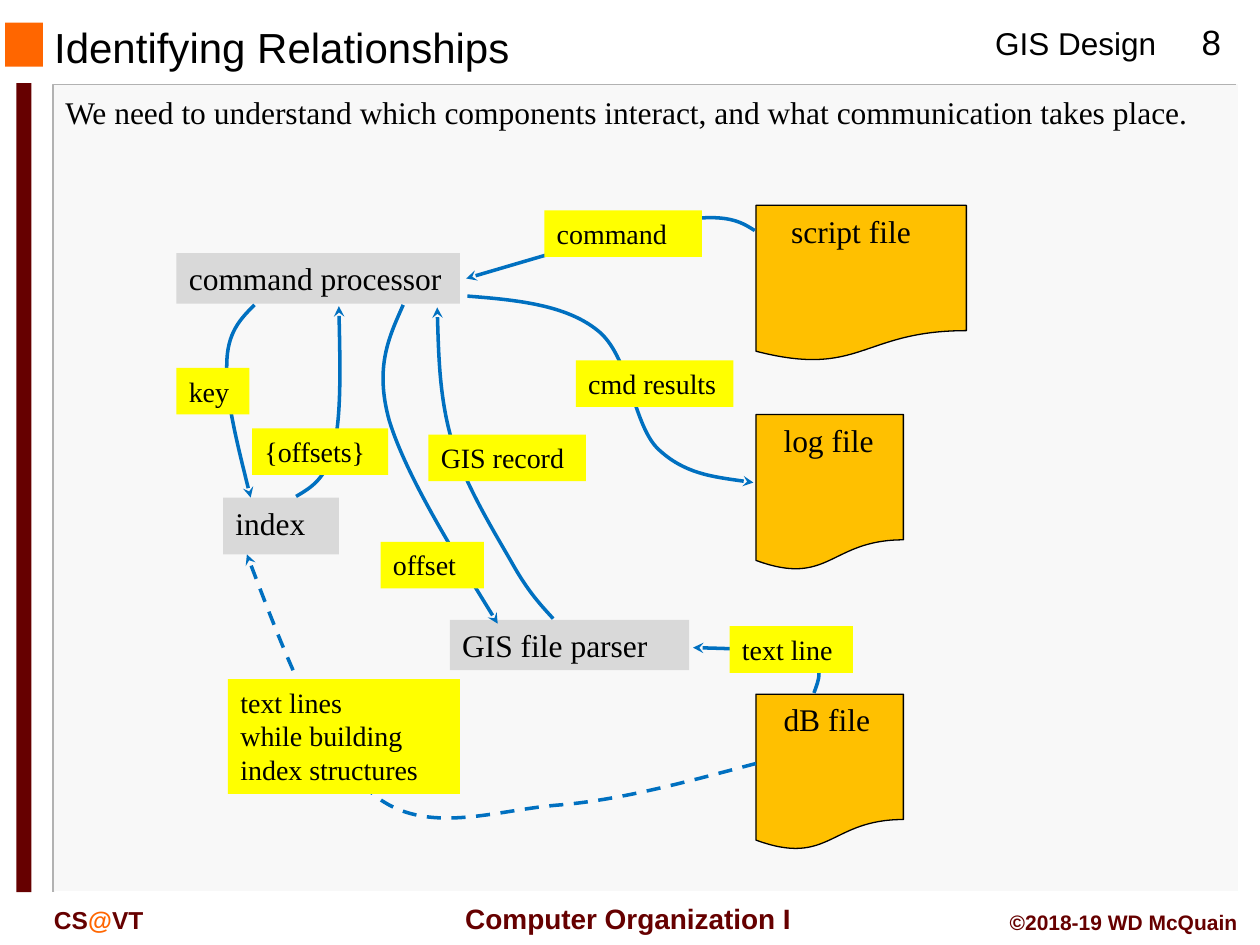
from lxml.etree import SubElement
from pptx import Presentation
from pptx.dml.color import RGBColor
from pptx.enum.dml import MSO_LINE
from pptx.enum.shapes import MSO_SHAPE
from pptx.enum.text import MSO_ANCHOR, PP_ALIGN
from pptx.oxml.ns import qn
from pptx.util import Inches, Pt

BLACK = RGBColor(0x00, 0x00, 0x00)
WHITE = RGBColor(0xFF, 0xFF, 0xFF)
PANEL = RGBColor(0xF8, 0xF8, 0xF8)
EDGE = RGBColor(0xB2, 0xB2, 0xB2)
ORANGE = RGBColor(0xFF, 0x66, 0x00)
MAROON = RGBColor(0x66, 0x00, 0x00)
GREY = RGBColor(0xD9, 0xD9, 0xD9)
AMBER = RGBColor(0xFF, 0xC0, 0x00)
YELLOW = RGBColor(0xFF, 0xFF, 0x00)
BLUE = RGBColor(0x00, 0x70, 0xC0)
SANS, SERIF = "Arial", "Times New Roman"

TITLE = "Identifying Relationships"
INTRO = "We need to understand which components interact, and what communication takes place."

FRAME_BLOCKS = [
    ((0.43, 0.67, 9.4, 6.41), PANEL),
    ((0.04, 0.18, 0.3, 0.35), ORANGE),
    ((0.13, 0.66, 0.12, 6.42), MAROON),
]
FRAME_EDGES = [
    ([(9.81, 0.67), (0.42, 0.67), (0.42, 7.08)], EDGE),
    ([(9.83, 0.67), (9.83, 7.08), (0.44, 7.08)], WHITE),
]
FRAME_TEXTS = [
    ((7.8, 0.14, 1.49, 0.4), [("GIS Design", BLACK)], 18, False, PP_ALIGN.LEFT),
    ((9.28, 0.11, 0.67, 0.43), [("8", BLACK)], 20, False, PP_ALIGN.CENTER),
    ((3.48, 7.11, 2.95, 0.37), [(" Computer Organization I", MAROON)], 16, True, PP_ALIGN.CENTER),
    ((0.33, 7.13, 1.5, 0.33), [("CS", MAROON), ("@", ORANGE), ("VT", MAROON)], 14, True, PP_ALIGN.LEFT),
    ((7, 7.17, 2.92, 0.3), [("©2018-19 WD McQuain", MAROON)], 12, True, PP_ALIGN.RIGHT),
]
COMPONENTS = [
    ("index", (1.77, 3.95, 0.92, 0.45)),
    ("GIS file parser", (3.57, 4.92, 1.9, 0.4)),
    ("command processor", (1.4, 2.01, 2.25, 0.4)),
]
FILE_LEFT, FILE_HEIGHT = 6, 1.24
FILES = [
    ("dB file", 5.51, 1.17, 0.12, 0.92),
    ("script file", 1.63, 1.67, 0.18, 1.31),
    ("log file", 3.29, 1.17, 0.12, 0.92),
]
FLOWS = [
    [(5.99, 1.83), (5.88, 1.76), (5.77, 1.69), (5.39, 1.75), (5.01, 1.82), (4.35, 2.02), (3.7, 2.21)],
    [(3.71, 2.35), (4.1, 2.38), (4.49, 2.42), (4.74, 2.62), (5, 2.82), (5.02, 3.36), (5.22, 3.56),
     (5.43, 3.76), (5.7, 3.79), (5.98, 3.83)],
    [(2.02, 2.42), (1.91, 2.53), (1.8, 2.64), (1.8, 2.9), (1.79, 3.15), (1.89, 3.55), (1.99, 3.95)],
    [(2.35, 3.94), (2.47, 3.87), (2.59, 3.8), (2.65, 3.55), (2.71, 3.3), (2.7, 2.86), (2.69, 2.43)],
    [(3.2, 2.42), (3.09, 2.67), (2.97, 2.91), (3.09, 3.34), (3.22, 3.76), (3.58, 4.35), (3.95, 4.95)],
    [(4.39, 4.91), (4.3, 4.81), (4.2, 4.71), (4.07, 4.48), (3.94, 4.25), (3.69, 3.85), (3.59, 3.51),
     (3.49, 3.17), (3.48, 2.8), (3.47, 2.44)],
    [(6.46, 5.5), (6.5, 5.39), (6.55, 5.28), (6.39, 5.22), (6.23, 5.16), (5.86, 5.15), (5.5, 5.14)],
]
INDEX_FLOW = [(6, 6.06), (5.47, 6.2), (4.93, 6.35), (4.43, 6.39), (3.92, 6.43), (3.38, 6.64),
              (2.97, 6.31), (2.56, 5.97), (2.26, 5.19), (1.96, 4.4)]
MESSAGE_HEIGHT = 0.37
MESSAGES = [
    ("command", 4.32, 1.67, 1.25),
    ("cmd results", 4.57, 2.86, 1.25),
    ("GIS record", 3.4, 3.45, 1.25),
    ("key", 1.4, 2.92, 0.58),
    ("{offsets}", 2, 3.4, 1.08),
    ("offset", 3.02, 4.3, 0.82),
    ("text line", 5.79, 4.97, 0.98),
]
INDEX_MESSAGE = "text lines\nwhile building index structures"


def style_span(span, size, font, color, bold=False):
    span.font.size = Pt(size)
    span.font.name = font
    span.font.bold = bold
    span.font.color.rgb = color


def write(box, text, size, font=SERIF, anchor=MSO_ANCHOR.TOP, wrap=True):
    frame = box.text_frame
    frame.text = text
    frame.word_wrap = wrap
    frame.vertical_anchor = anchor
    for para in frame.paragraphs:
        para.alignment = PP_ALIGN.LEFT
        for span in para.runs:
            style_span(span, size, font, BLACK)


def add_block(page, area, fill, kind=MSO_SHAPE.RECTANGLE):
    block = page.shapes.add_shape(kind, *map(Inches, area))
    block.shadow.inherit = False
    block.fill.solid()
    block.fill.fore_color.rgb = fill
    block.line.fill.background()
    return block


def add_label(page, text, area, fill, size):
    write(add_block(page, area, fill), text, size)


def add_text(page, area):
    return page.shapes.add_textbox(*map(Inches, area))


def add_path(page, points, color, width):
    corners = [(Inches(x), Inches(y)) for x, y in points]
    builder = page.shapes.build_freeform(*corners[0])
    builder.add_line_segments(corners[1:], close=False)
    outline = builder.convert_to_shape()
    outline.shadow.inherit = False
    outline.fill.background()
    outline.line.color.rgb = color
    outline.line.width = Pt(width)
    return outline


def add_flow(page, points, dashed=False):
    flow = add_path(page, points, BLUE, 2)
    if dashed:
        flow.line.dash_style = MSO_LINE.DASH
    track = flow.element.find(".//" + qn("a:path"))
    steps = track.findall(qn("a:lnTo"))
    for start in range(0, len(steps), 3):
        curve = SubElement(track, qn("a:cubicBezTo"))
        for step in steps[start:start + 3]:
            curve.append(step[0])
            track.remove(step)
    line = flow.element.spPr.find(qn("a:ln"))
    SubElement(line, qn("a:tailEnd"), type="stealth")


def add_frame(page):
    for area, fill in FRAME_BLOCKS:
        add_block(page, area, fill)
    for points, color in FRAME_EDGES:
        add_path(page, points, color, 1)
    for area, parts, size, bold, alignment in FRAME_TEXTS:
        box = add_text(page, area)
        box.text_frame.word_wrap = True
        para = box.text_frame.paragraphs[0]
        para.alignment = alignment
        for text, color in parts:
            span = para.add_run()
            span.text = text
            style_span(span, size, SANS, color, bold)


def main():
    deck = Presentation()
    deck.slide_width, deck.slide_height = Inches(10), Inches(7.5)
    page = deck.slides.add_slide(deck.slide_layouts[5])
    add_frame(page)

    title = page.shapes.title
    title.left, title.top, title.width, title.height = map(Inches, (0.33, 0.18, 6.33, 0.38))
    write(title, TITLE, 24, SANS, MSO_ANCHOR.MIDDLE)
    write(add_text(page, (0.42, 0.69, 9.33, 0.4)), INTRO, 18)

    for name, area in COMPONENTS:
        add_label(page, name, area, GREY, 18)
    for name, top, width, inset, label_width in FILES:
        document = add_block(page, (FILE_LEFT, top, width, FILE_HEIGHT), AMBER,
                             MSO_SHAPE.FLOWCHART_DOCUMENT)
        document.line.color.rgb = BLACK
        document.line.width = Pt(0.75)
        write(add_text(page, (FILE_LEFT + inset, top, label_width, 0.45)), name, 18)
    for points in FLOWS:
        add_flow(page, points)
    for text, left, top, width in MESSAGES:
        add_label(page, text, (left, top, width, MESSAGE_HEIGHT), YELLOW, 16)
    add_flow(page, INDEX_FLOW, dashed=True)
    add_label(page, INDEX_MESSAGE, (1.81, 5.39, 1.84, 0.91), YELLOW, 16)

    deck.save("out.pptx")


if __name__ == "__main__":
    main()
